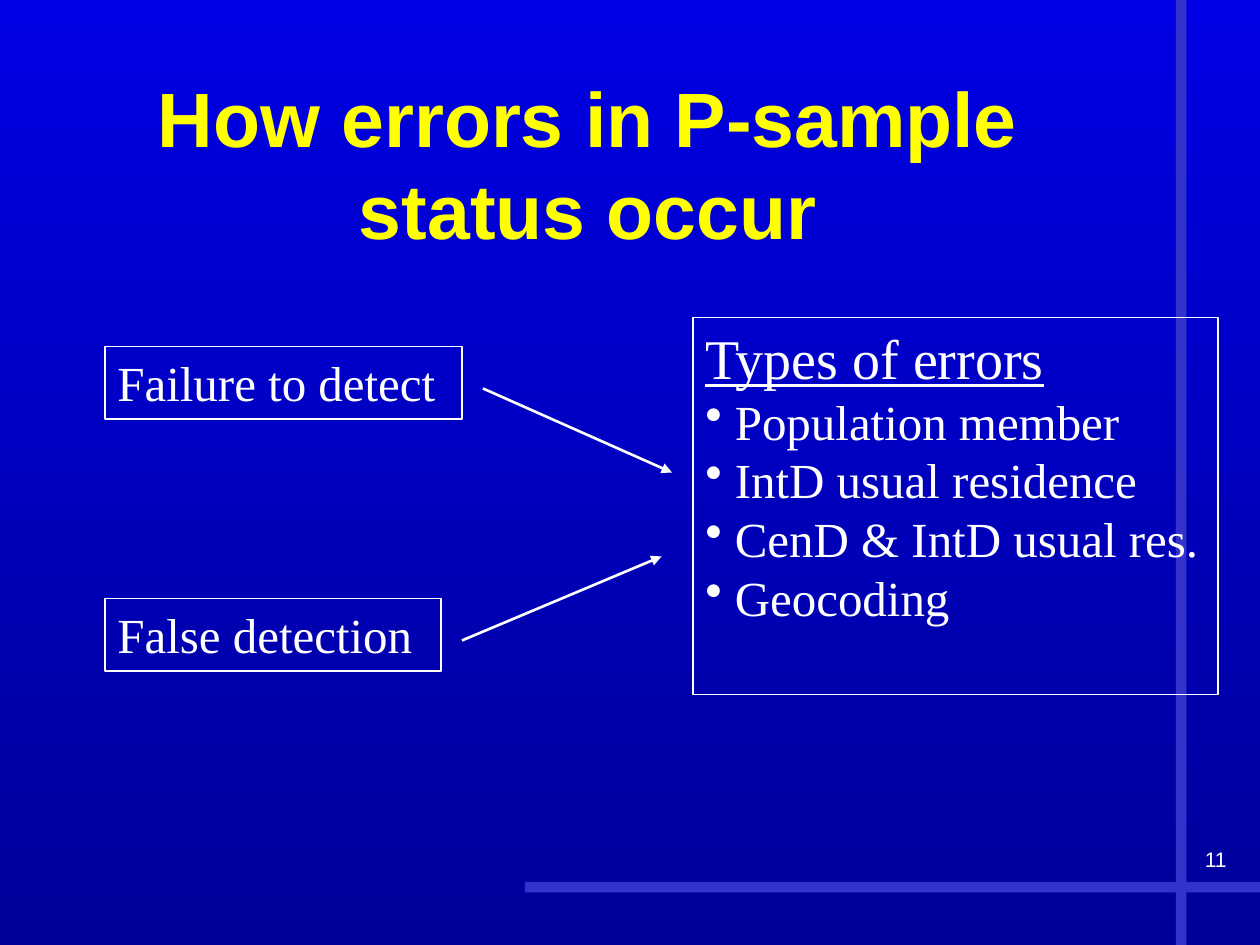
from dataclasses import dataclass

from lxml.etree import SubElement
from pptx import Presentation
from pptx.dml.color import RGBColor
from pptx.enum.shapes import MSO_CONNECTOR, MSO_SHAPE
from pptx.enum.text import MSO_ANCHOR, PP_ALIGN
from pptx.oxml.ns import qn
from pptx.util import Pt


@dataclass(frozen=True)
class Theme:
    sky: RGBColor = RGBColor(0x00, 0x00, 0xE4)
    deep: RGBColor = RGBColor(0x00, 0x00, 0x99)
    band: RGBColor = RGBColor(0x33, 0x33, 0xCC)
    title: RGBColor = RGBColor(0xFF, 0xFF, 0x00)
    ink: RGBColor = RGBColor(0xFF, 0xFF, 0xFF)
    sans: str = "Arial"
    serif: str = "Times New Roman"
    title_size: Pt = Pt(44)
    heading_size: Pt = Pt(32)
    body_size: Pt = Pt(28)
    number_size: Pt = Pt(12)


THEME = Theme()
BODY = {"name": THEME.serif, "size": THEME.body_size}
HEADING = {"name": THEME.serif, "size": THEME.heading_size, "underline": True}
TITLE = {"name": THEME.sans, "size": THEME.title_size, "bold": True}
NUMBER = {"name": THEME.sans, "size": THEME.number_size}
BULLET_INDENT = Pt(16.8)


def paint_background(slide):
    fill = slide.background.fill
    fill.gradient()
    fill.gradient_angle = 270
    for stop, color, position in zip(fill.gradient_stops, (THEME.sky, THEME.deep), (0, 1)):
        stop.color.rgb = color
        stop.position = position


def add_band(slide, left, top, width, height):
    band = slide.shapes.add_shape(
        MSO_SHAPE.RECTANGLE, Pt(left), Pt(top), Pt(width), Pt(height))
    band.shadow.inherit = False
    band.fill.solid()
    band.fill.fore_color.rgb = THEME.band
    band.line.fill.background()


def add_bullet(paragraph):
    properties = paragraph._p.get_or_add_pPr()
    properties.set("marL", str(BULLET_INDENT))
    properties.set("indent", str(-BULLET_INDENT))
    SubElement(properties, qn("a:buChar"), char="•")


def write(paragraph, text, style, color=THEME.ink, align=PP_ALIGN.LEFT):
    paragraph.alignment = align
    run = paragraph.add_run()
    run.text = text
    for attribute, value in style.items():
        setattr(run.font, attribute, value)
    run.font.color.rgb = color


def add_label(slide, place, text, style, color, align, anchor):
    frame = slide.shapes.add_textbox(*map(Pt, place)).text_frame
    frame.word_wrap = True
    frame.vertical_anchor = anchor
    write(frame.paragraphs[0], text, style, color, align)


def add_outlined_box(slide, place, text, style, bullets=()):
    box = slide.shapes.add_shape(MSO_SHAPE.RECTANGLE, *map(Pt, place))
    box.shadow.inherit = False
    box.fill.background()
    box.line.color.rgb = THEME.ink
    box.line.width = Pt(0.75)
    frame = box.text_frame
    frame.word_wrap = True
    frame.vertical_anchor = MSO_ANCHOR.TOP
    write(frame.paragraphs[0], text, style)
    for bullet in bullets:
        paragraph = frame.add_paragraph()
        add_bullet(paragraph)
        write(paragraph, bullet, BODY)


def add_arrow(slide, start, end):
    arrow = slide.shapes.add_connector(
        MSO_CONNECTOR.STRAIGHT, *map(Pt, start + end))
    arrow.line.color.rgb = THEME.ink
    arrow.line.width = Pt(1.5)
    SubElement(arrow.line._get_or_add_ln(), qn("a:tailEnd"), type="triangle")
    SubElement(arrow._element.spPr, qn("a:effectLst"))


def main():
    deck = Presentation()
    deck.slide_width, deck.slide_height = Pt(720), Pt(540)
    slide = deck.slides.add_slide(deck.slide_layouts[6])

    paint_background(slide)
    add_band(slide, 300, 504, 420, 6)
    add_band(slide, 672, 0, 6, 540)
    add_label(slide, (558, 480, 150, 36), "11", NUMBER,
              THEME.ink, PP_ALIGN.RIGHT, MSO_ANCHOR.TOP)
    add_label(slide, (24, 48, 624, 90), "How errors in P-sample status occur", TITLE,
              THEME.title, PP_ALIGN.CENTER, MSO_ANCHOR.MIDDLE)

    add_outlined_box(slide, (60, 198, 204, 41.5), "Failure to detect", BODY)
    add_outlined_box(slide, (60, 342, 192, 41.5), "False detection", BODY)
    add_outlined_box(
        slide, (396, 181.5, 300, 215.5), "Types of errors", HEADING,
        ("Population member", "IntD usual residence", "CenD & IntD usual res.", "Geocoding"))

    add_arrow(slide, (276, 222), (384, 270))
    add_arrow(slide, (264, 366), (378, 318))

    deck.save("out.pptx")


if __name__ == "__main__":
    main()
